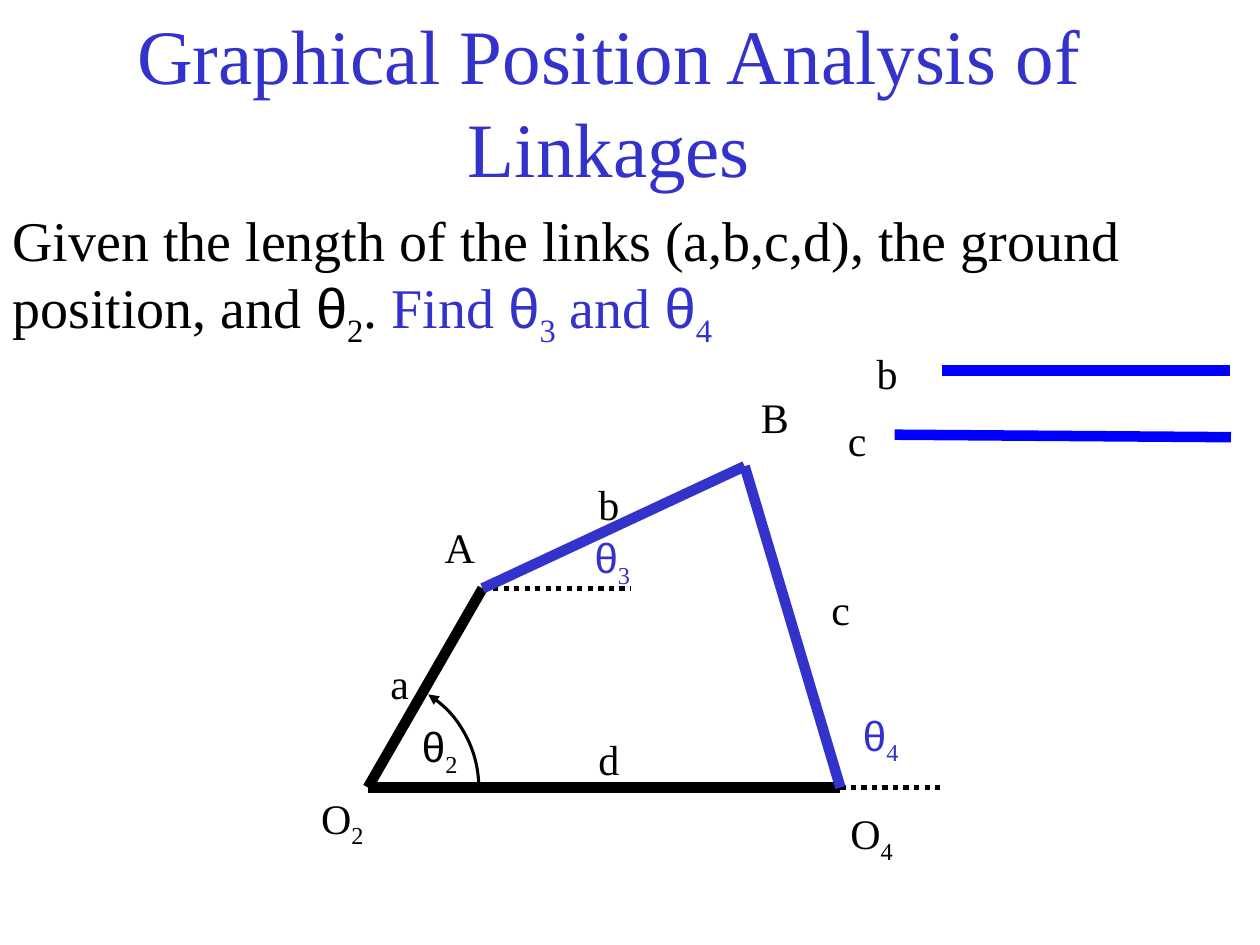
from dataclasses import dataclass

from lxml.etree import SubElement
from pptx import Presentation
from pptx.dml.color import RGBColor
from pptx.enum.dml import MSO_LINE
from pptx.enum.shapes import MSO_CONNECTOR, MSO_SHAPE
from pptx.enum.text import MSO_ANCHOR, MSO_AUTO_SIZE, PP_ALIGN
from pptx.oxml.ns import qn
from pptx.util import Inches, Pt

BLACK = RGBColor(0x00, 0x00, 0x00)
INDIGO = RGBColor(0x33, 0x33, 0xCC)
BLUE = RGBColor(0x00, 0x00, 0xFF)
SERIF, GREEK = "Times New Roman", "Arial"

Point = tuple[float, float]


@dataclass
class Span:
    text: str
    color: RGBColor = BLACK
    font: str = SERIF
    sub: bool = False


@dataclass
class Label:
    x: float
    y: float
    width: float
    spans: list[Span]


@dataclass
class Link:
    start: Point
    end: Point
    color: RGBColor = BLACK
    weight: float = 6
    dotted: bool = False


def symbol(letter: str, index: str, color: RGBColor = BLACK) -> list[Span]:
    """A letter with a subscript."""
    font = GREEK if letter == "θ" else SERIF
    return [Span(letter, color, font), Span(index, color, sub=True)]


def write(p, spans: list[Span], size: float) -> None:
    p.font.size = Pt(size)
    for span in spans:
        r = p.add_run()
        r.text = span.text
        r.font.name = span.font
        r.font.color.rgb = span.color
        if span.sub:
            r.font._element.set("baseline", "-25000")


def add_label(slide, label: Label) -> None:
    box = slide.shapes.add_textbox(Inches(label.x), Inches(label.y),
                                   Inches(label.width), Inches(0.5))
    tf = box.text_frame
    tf.word_wrap = False
    tf.auto_size = MSO_AUTO_SIZE.SHAPE_TO_FIT_TEXT
    write(tf.paragraphs[0], label.spans, 24)


def add_link(slide, link: Link) -> None:
    ends = [Inches(v) for v in (*link.start, *link.end)]
    line = slide.shapes.add_connector(MSO_CONNECTOR.STRAIGHT, *ends)
    line.line.color.rgb = link.color
    line.line.width = Pt(link.weight)
    if link.dotted:
        line.line.dash_style = MSO_LINE.ROUND_DOT
    SubElement(line._element.spPr, qn("a:effectLst"))


def add_angle_arc(slide, center: Point, radius: float, degrees: float) -> None:
    """An arc from the horizontal, with an arrowhead at its upper end."""
    x, y = center
    sp = slide.shapes.add_shape(MSO_SHAPE.ARC, Inches(x - radius), Inches(y - radius),
                                Inches(2 * radius), Inches(2 * radius))
    # Angles are stored in 60000ths of a degree, adjustments in 100000ths
    sp.adjustments[0] = (360 - degrees) * 0.6
    sp.adjustments[1] = 0
    sp.shadow.inherit = False
    sp.fill.background()
    sp.line.color.rgb = BLACK
    sp.line.width = Pt(1.75)
    SubElement(sp.line._get_or_add_ln(), qn("a:headEnd"), type="triangle")


prs = Presentation()
prs.slide_width, prs.slide_height = Inches(10), Inches(7.5)
slide = prs.slides.add_slide(prs.slide_layouts[5])

# Title
title = slide.shapes.title
title.left, title.top = Inches(0), Inches(0.17)
title.width, title.height = Inches(9.67), Inches(1.25)
tf = title.text_frame
tf.auto_size = MSO_AUTO_SIZE.NONE
tf.vertical_anchor = MSO_ANCHOR.MIDDLE
p = tf.paragraphs[0]
p.text = "Graphical Position Analysis of Linkages"
p.alignment = PP_ALIGN.CENTER
p.font.name, p.font.size = SERIF, Pt(44)
p.font.color.rgb = INDIGO

# Problem statement
body = slide.shapes.add_textbox(Inches(0), Inches(1.58), Inches(9.5), Inches(5.67))
body.text_frame.word_wrap = True
write(body.text_frame.paragraphs[0], [
    Span("Given the length of the links (a,b,c,d), the ground position, and "),
    *symbol("θ", "2"),
    Span(". "),
    Span("Find ", INDIGO),
    *symbol("θ", "3", INDIGO),
    Span(" and ", INDIGO),
    *symbol("θ", "4", INDIGO),
], 32)

# Four-bar linkage, reference lines and the lengths of b and c
O2, A, B, O4 = (2.92, 6.25), (3.83, 4.67), (5.91, 3.7), (6.67, 6.25)
for link in [
    Link(O2, O4),
    Link(O2, A),
    Link(O4, (7.5, 6.25), weight=3, dotted=True),
    Link(A, (5, 4.67), weight=3, dotted=True),
    Link(A, B, INDIGO),
    Link(O4, B, INDIGO),
    Link((7.48, 2.94), (9.76, 2.94), BLUE),
    Link((9.77, 3.47), (7.1, 3.45), BLUE),
]:
    add_link(slide, link)
add_angle_arc(slide, O2, 0.88, 57)

# Labels of links, angles and joints
for label in [
    Label(3, 5.17, 0.35, [Span("a")]),
    Label(4.65, 3.75, 0.37, [Span("b")]),
    Label(6.5, 4.58, 0.35, [Span("c")]),
    Label(4.65, 5.77, 0.37, [Span("d")]),
    Label(6.86, 2.71, 0.37, [Span("b")]),
    Label(6.63, 3.24, 0.35, [Span("c")]),
    Label(3.25, 5.67, 0.49, symbol("θ", "2")),
    Label(4.62, 4.17, 0.49, symbol("θ", "3", INDIGO)),
    Label(6.75, 5.58, 0.49, symbol("θ", "4", INDIGO)),
    Label(3.43, 4.09, 0.44, [Span("A")]),
    Label(5.94, 3.06, 0.42, [Span("B")]),
    Label(2.45, 6.24, 0.55, symbol("O", "2")),
    Label(6.65, 6.36, 0.55, symbol("O", "4")),
]:
    add_label(slide, label)

prs.save("out.pptx")
